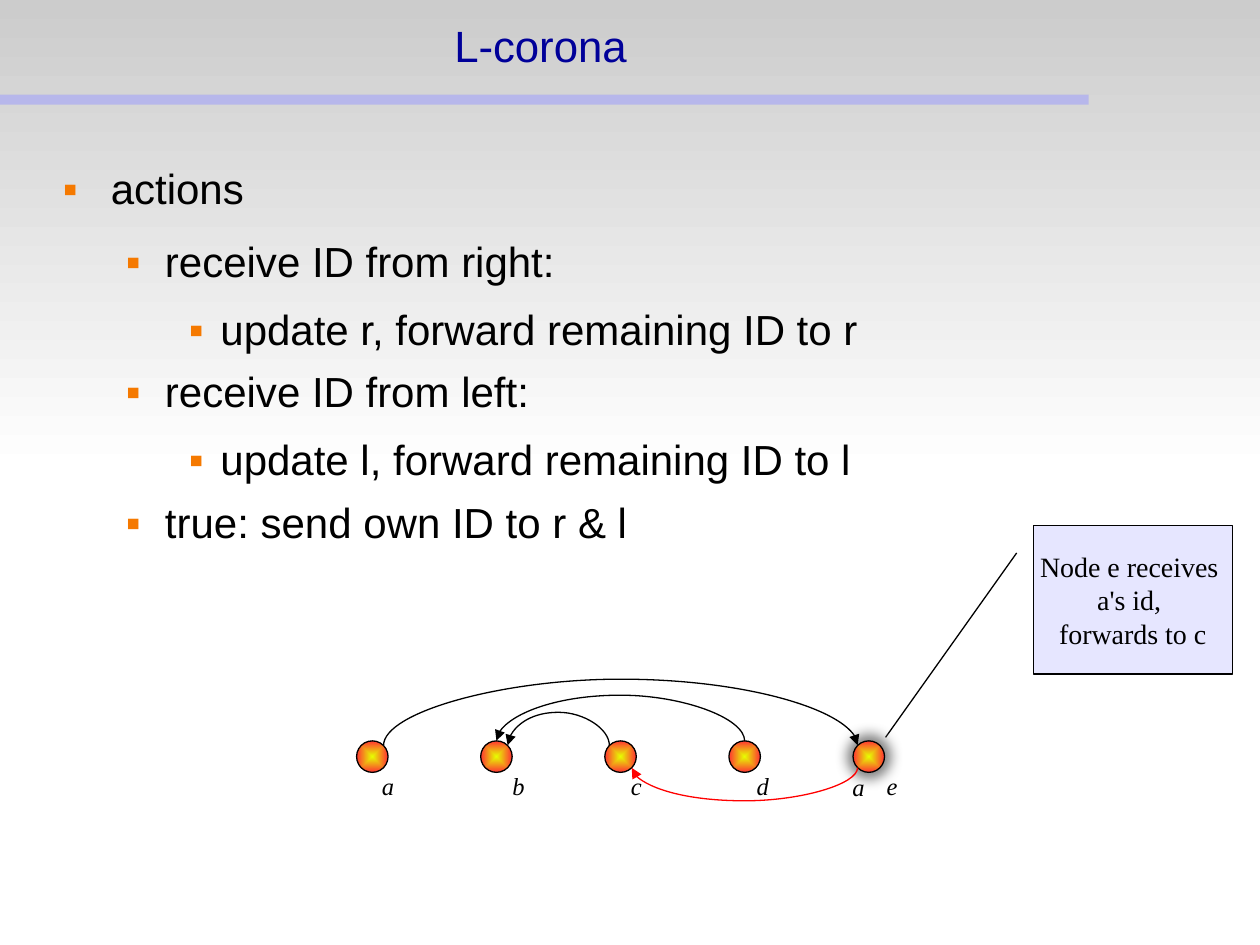
from dataclasses import dataclass
from lxml.etree import SubElement
from pptx import Presentation
from pptx.dml.color import RGBColor
from pptx.enum.shapes import MSO_CONNECTOR, MSO_SHAPE
from pptx.enum.text import MSO_ANCHOR, PP_ALIGN
from pptx.oxml.ns import qn
from pptx.util import Inches, Pt


@dataclass(frozen=True)
class Theme:
    sans: str = "Arial"
    serif: str = "Times New Roman"
    ink: str = "000000"
    title: str = "000099"
    bar: str = "9999FF"
    fade: tuple = ("CCCCCC", "FFFFFF")
    node: tuple = ("E6FF00", "FF3333")
    note: str = "E6E6FF"
    mark: str = "F57900"
    alert: str = "FF0000"
    glow: str = "808080"
    head: float = 25
    body: float = 24
    call: float = 16
    label: float = 14
    line: float = 0.75


THEME = Theme()


def rgb(code):
    return RGBColor.from_string(code)


def tag(parent, kind, /, **attrs):
    node = SubElement(parent, qn(kind))
    for key, value in attrs.items():
        node.set(key, str(value))
    return node


def write(para, text, size, face, color, italic=False):
    run = para.add_run()
    run.text = text
    font = run.font
    font.size, font.name, font.italic = Pt(size), face, italic
    font.color.rgb = rgb(color)


def frame(shape, pad=(0, 0, 0, 0), wrap=True, anchor=MSO_ANCHOR.TOP):
    text = shape.text_frame
    text.margin_left, text.margin_top, text.margin_right, text.margin_bottom = map(Inches, pad)
    text.word_wrap = wrap
    text.vertical_anchor = anchor
    return text


def form(slide, kind, box, line=None):
    shape = slide.shapes.add_shape(kind, *map(Inches, box))
    shape.shadow.inherit = False
    if line:
        shape.line.color.rgb = rgb(line)
        shape.line.width = Pt(THEME.line)
    else:
        shape.line.fill.background()
    return shape


def blend(shape, colors):
    shape.fill.gradient()
    for stop, color, place in zip(shape.fill.gradient_stops, colors, (0, 1)):
        stop.color.rgb = rgb(color)
        stop.position = place


def header(slide, box):
    left, top, width, height = box
    back = form(slide, MSO_SHAPE.ROUNDED_RECTANGLE, box)
    back.adjustments[0] = 0
    blend(back, THEME.fade)
    back.fill.gradient_angle = 270

    bar = form(slide, MSO_SHAPE.RECTANGLE, (left, top + 0.75, 8.64, 0.08))
    bar.fill.solid()
    bar.fill.fore_color.rgb = rgb(THEME.bar)
    tag(next(bar._element.spPr.iter(qn("a:srgbClr"))), "a:alpha", val=50000)

    title = slide.shapes.add_textbox(*map(Inches, (left, top, 8.58, 0.75)))
    para = frame(title, anchor=MSO_ANCHOR.MIDDLE).paragraphs[0]
    para.alignment = PP_ALIGN.CENTER
    para.line_spacing = 0.98
    write(para, "L-corona", THEME.head, THEME.sans, THEME.title)


def outline(slide, box):
    levels = ((0.38, 0.38, 14.2), (0.81, 0.31, 11.4), (1.25, 0.25, 8.5))
    rows = (
        (0, "actions"),
        (1, "receive ID from right:"),
        (2, "update r, forward remaining ID to r"),
        (1, "receive ID from left:"),
        (2, "update l, forward remaining ID to l"),
        (1, "true: send own ID to r & l"),
    )
    text = frame(slide.shapes.add_textbox(*map(Inches, box)), (0, 0.02, 0, 0))
    for index, (level, words) in enumerate(rows):
        para = text.add_paragraph() if index else text.paragraphs[0]
        margin, hang, after = levels[level]
        para.level = level
        para.line_spacing = 0.95
        para.space_after = Pt(after)
        props = para._p.get_or_add_pPr()
        props.set("marL", str(Inches(margin)))
        props.set("indent", str(-Inches(hang)))
        tag(tag(props, "a:buClr"), "a:srgbClr", val=THEME.mark)
        tag(props, "a:buFont", typeface=THEME.sans)
        tag(props, "a:buChar", char="▪")
        write(para, words, THEME.body, THEME.sans, THEME.ink)


def callout(slide, box):
    shape = form(slide, MSO_SHAPE.LINE_CALLOUT_1, box, THEME.ink)
    shape.fill.solid()
    shape.fill.fore_color.rgb = rgb(THEME.note)
    for index, value in enumerate((0.185, -0.083, 1.426, -0.742)):
        shape.adjustments[index] = value
    text = frame(shape, (0.1, 0.05, 0.1, 0.05), False, MSO_ANCHOR.MIDDLE)
    para = text.paragraphs[0]
    para.alignment = PP_ALIGN.CENTER
    for index, words in enumerate(("Node e receives ", "a's id, ", "forwards to c")):
        if index:
            para.add_line_break()
        write(para, words, THEME.call, THEME.serif, THEME.ink)


def label(slide, word, x, y):
    box = slide.shapes.add_textbox(*map(Inches, (x - 0.15, y, 0.3, 0.34)))
    para = frame(box, (0.1, 0.05, 0.1, 0.05), False).paragraphs[0]
    para.alignment = PP_ALIGN.CENTER
    write(para, word, THEME.label, THEME.serif, THEME.ink, True)


def disc(slide, box):
    shape = form(slide, MSO_SHAPE.OVAL, box, THEME.ink)
    blend(shape, THEME.node)
    grad = shape._element.spPr.find(qn("a:gradFill"))
    grad.remove(grad.find(qn("a:lin")))
    tag(tag(grad, "a:path", path="shape"), "a:fillToRect", l=50000, t=50000, r=50000, b=50000)
    return shape


def arc(slide, start, end, x1, x2, y, depth, turn, flips, color):
    thin, span = Pt(0.125), Inches(abs(x2 - x1))
    line = slide.shapes.add_connector(MSO_CONNECTOR.CURVE, 0, 0, 0, 0)
    line.left = Inches((x1 + x2) / 2) - thin // 2
    line.top = Inches(y) - span // 2
    line.width, line.height = thin, span
    line.line.color.rgb = rgb(color)
    line.line.width = Pt(THEME.line)
    props = line._element.spPr
    place = props.find(qn("a:xfrm"))
    place.set("rot", str(turn * 60000))
    for flip in flips:
        place.set("flip" + flip, "1")
    bend = props.find(qn("a:prstGeom")).find(qn("a:avLst"))
    ratio = round(Inches(depth) / thin * 100000)
    tag(bend, "a:gd", name="adj1", fmla=f"val {ratio}")
    tag(props.find(qn("a:ln")), "a:tailEnd", type="triangle")
    tag(props, "a:effectLst")
    joins = next(line._element.iter(qn("p:cNvCxnSpPr")))
    for kind, (shape, site) in (("a:stCxn", start), ("a:endCxn", end)):
        tag(joins, kind, id=shape.shape_id, idx=site)


def graph(slide, box):
    left, top, width, height = box
    size = 0.25
    step = (width - size) / 4
    y = top + 0.54
    shifts = (0.25, 0.3, 0.25, 0.27, 0.31)
    nodes, mids = {}, {}
    for index, (name, shift) in enumerate(zip("abcde", shifts)):
        x = left + index * step
        label(slide, name, x + shift, y + 0.19)
        nodes[name] = disc(slide, (x, y, size, size))
        mids[name] = x + size / 2

    effects = nodes["e"]._element.spPr.find(qn("a:effectLst"))
    shade = tag(effects, "a:outerShdw", blurRad=Inches(0.1), dist=0, sx=135000, sy=135000,
                algn="ctr", rotWithShape=0)
    tag(shade, "a:srgbClr", val=THEME.glow)

    reach = size / 2 * 0.71
    sites = {0: (0, -size / 2), 1: (-reach, -reach), 3: (-reach, reach),
             5: (reach, reach), 7: (reach, -reach)}
    arcs = (
        ("a", 7, "e", 1, 0.58, 90, "HV", THEME.ink),
        ("e", 3, "c", 5, 0.29, 90, "", THEME.alert),
        ("d", 0, "b", 0, 0.4, 270, "V", THEME.ink),
        ("c", 1, "b", 7, 0.29, 270, "V", THEME.ink),
    )
    for one, out, two, into, depth, turn, flips, color in arcs:
        arc(slide, (nodes[one], out), (nodes[two], into),
            mids[one] + sites[out][0], mids[two] + sites[into][0],
            y + size / 2 + sites[out][1], depth, turn, flips, color)
    label(slide, "a", mids["e"] - 0.08, y + 0.2)


def main():
    deck = Presentation()
    deck.slide_width, deck.slide_height = Inches(10), Inches(7.5)
    slide = deck.slides.add_slide(deck.slide_layouts[6])
    header(slide, (0, 0, 10, 3.75))
    callout(slide, (8.2, 4.17, 1.58, 1.18))
    graph(slide, (2.83, 5.34, 4.19, 1.07))
    outline(slide, (0.5, 1.3, 9, 4.95))
    deck.save("out.pptx")


if __name__ == "__main__":
    main()
